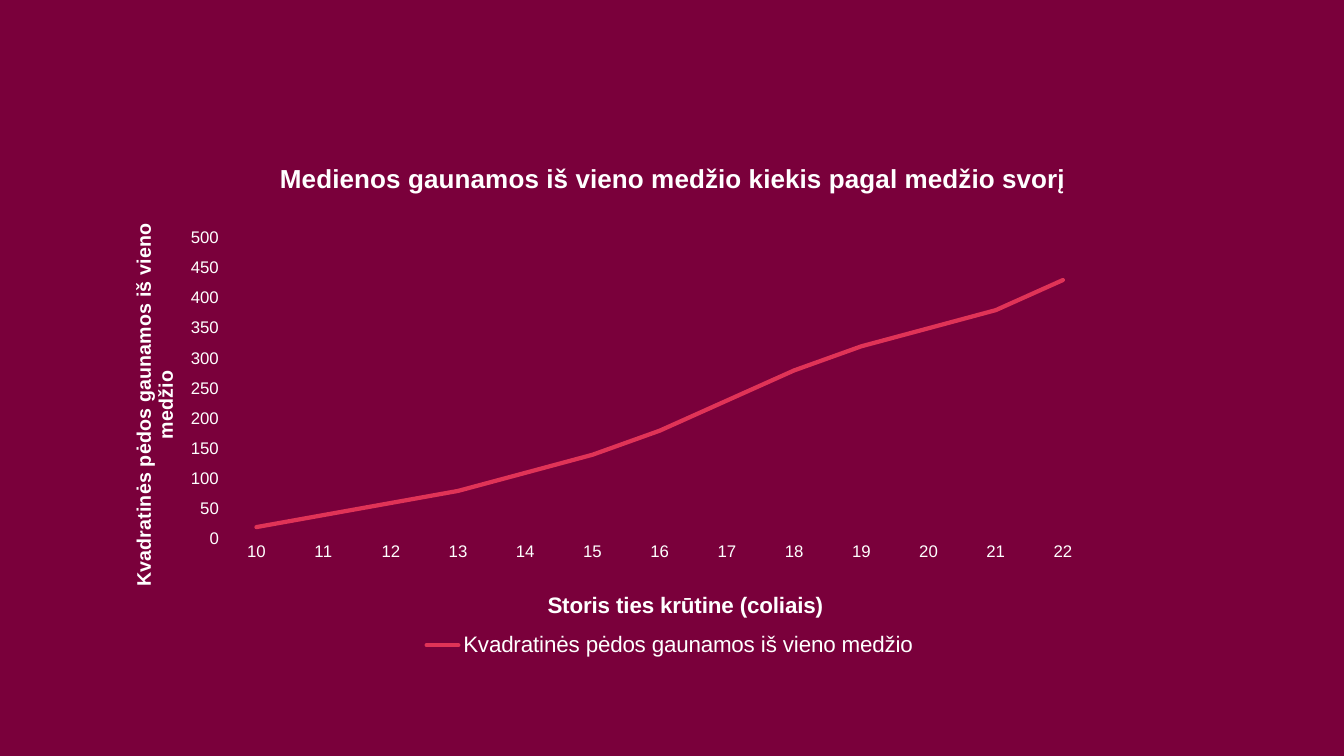
from pptx import Presentation
from pptx import util as u
from pptx.chart import data
from pptx.dml.color import RGBColor
from pptx.enum import chart as ce
from pptx.oxml import parse_xml
from pptx.oxml.ns import nsdecls

BURGUNDY = RGBColor(0x7A, 0x00, 0x3B)
WHITE = RGBColor(0xFF, 0xFF, 0xFF)
ROSE = RGBColor(0xE0, 0x33, 0x57)
SERIES_NAME = "Kvadratinės pėdos gaunamos iš vieno medžio"
CHART_W, CHART_H = 11.29, 5.37


def style_font(font, size, bold=False):
    font.name = "Arial"
    font.size = u.Pt(size)
    font.bold = bold
    font.color.rgb = WHITE


def place(parent, index, x, y, w=None, h=None, inner=False):
    for old in parent.xpath("c:layout"):
        parent.remove(old)
    target = '<c:layoutTarget val="inner"/>' if inner else ""
    modes = '<c:xMode val="edge"/><c:yMode val="edge"/>'
    size = f'<c:w val="{w / CHART_W}"/><c:h val="{h / CHART_H}"/>' if w else ""
    parent.insert(index, parse_xml(
        f'<c:layout {nsdecls("c")}><c:manualLayout>{target}{modes}'
        f'<c:x val="{x / CHART_W}"/><c:y val="{y / CHART_H}"/>{size}'
        '</c:manualLayout></c:layout>'))


prs = Presentation()
prs.slide_width = u.Inches(13.33)
prs.slide_height = u.Inches(7.5)
s = prs.slides.add_slide(prs.slide_layouts[6])
s.background.fill.solid()
s.background.fill.fore_color.rgb = BURGUNDY

cd = data.CategoryChartData()
cd.categories = [str(n) for n in range(10, 23)] + ["", ""]
cd.add_series(SERIES_NAME, [20, 40, 60, 80, 110, 140, 180, 230, 280, 320, 350, 380, 430, None, None])
chart = s.shapes.add_chart(
    ce.XL_CHART_TYPE.LINE, u.Inches(0.92), u.Inches(1.35),
    u.Inches(CHART_W), u.Inches(CHART_H), cd).chart
style_font(chart.font, 10)
chart.plots[0].vary_by_categories = False

line = chart.plots[0].series[0]
line.smooth = False
line.marker.style = ce.XL_MARKER_STYLE.NONE
line.format.line.color.rgb = ROSE
line.format.line.width = u.Pt(3)
chart.element.xpath("//c:ser/c:spPr/a:ln")[0].set("cap", "rnd")

cat, val = chart.category_axis, chart.value_axis
val.minimum_scale, val.maximum_scale, val.major_unit = 0, 500, 50
for axis in (cat, val):
    axis.has_major_gridlines = False
    axis.major_tick_mark = ce.XL_TICK_MARK.NONE
    axis.minor_tick_mark = ce.XL_TICK_MARK.NONE
    axis.format.line.fill.background()
    style_font(axis.tick_labels.font, 12)

titles = [
    (chart.chart_title, "Medienos gaunamos iš vieno medžio kiekis pagal medžio svorį", 18.6, 1.81, 0.2),
    (cat.axis_title, "Storis ties krūtine (coliais)", 16, 4.47, 4.47),
    (val.axis_title, SERIES_NAME, 14, 0.34, 0.83),
]
for title, words, size, x, y in titles:
    tf = title.text_frame
    r = tf.paragraphs[0].add_run()
    r.text = words
    style_font(r.font, size, True)
    place(tf._txBody.xpath("ancestor::c:title")[0], 1, x, y)
val.axis_title.text_frame._txBody.bodyPr.set("rot", "-5400000")
val.axis_title.text_frame._txBody.bodyPr.set("vert", "horz")

chart.has_legend = True
chart.legend.position = ce.XL_LEGEND_POSITION.BOTTOM
chart.legend.include_in_layout = False
style_font(chart.legend.font, 16)
place(chart.element.xpath("c:chart/c:legend")[0], 1, 3.24, 4.86, 4.97, 0.38)
place(chart.element.xpath("c:chart/c:plotArea")[0], 0, 1.29, 1.01, 10, 2.99, True)

prs.save("out.pptx")
